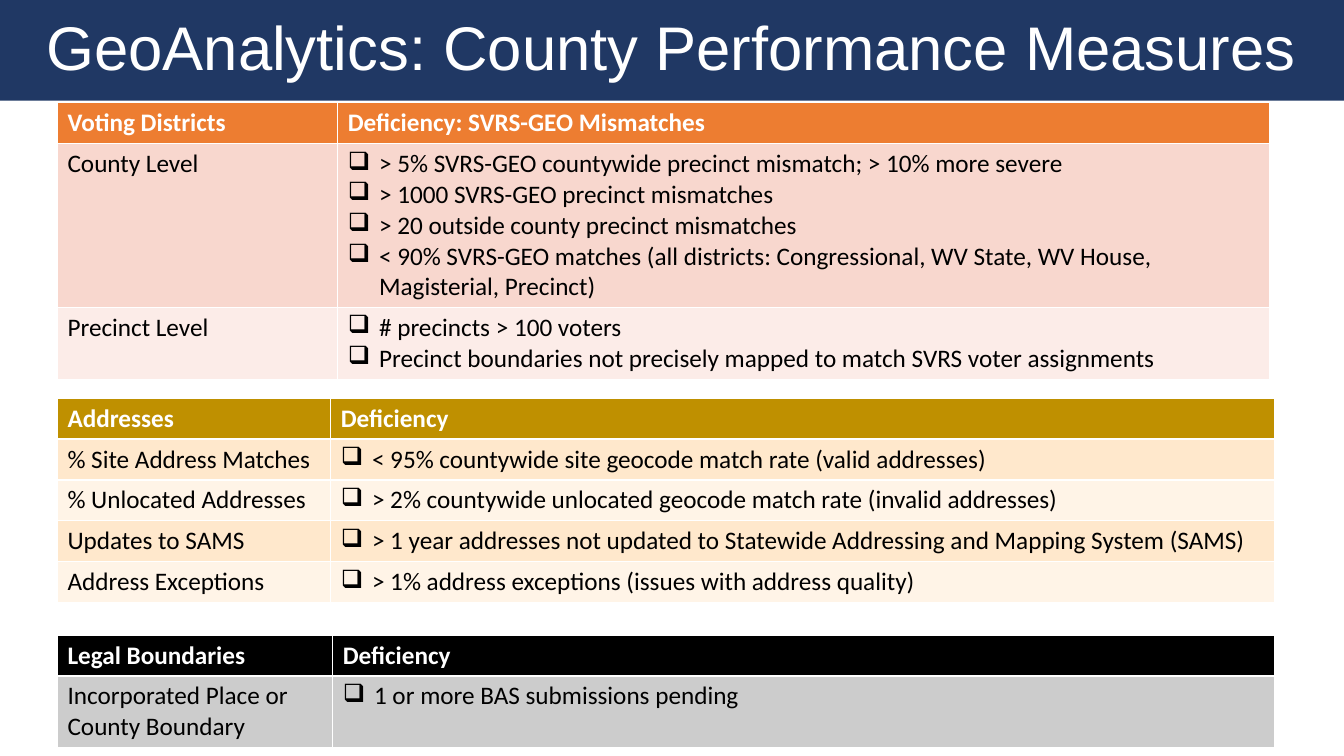
import pptx
import pptx.util
import pptx.dml.color
import pptx.enum.shapes
import pptx.enum.text
import lxml.etree

Inches = pptx.util.Inches
LEFT = 0.57      # shared left edge of the tables
LINE = 0.305     # height of one 18 pt line
PAD = 0.1        # top and bottom cell margins together
INDENT = 0.31    # hanging indent of the checklists


def color(hex_text):
    return pptx.dml.color.RGBColor.from_string(hex_text)


def write(p, text, size=18, font="Calibri", fill="000000", bold=False, bullet=None):
    r = p.add_run()
    r.text = text
    r.font.size = pptx.util.Pt(size)
    r.font.name = font
    r.font.bold = bold
    r.font.color.rgb = color(fill)
    if bullet:
        pPr = p._p.get_or_add_pPr()
        pPr.set("marL", str(Inches(INDENT)))
        pPr.set("indent", str(-Inches(INDENT)))
        ns = "{http://schemas.openxmlformats.org/drawingml/2006/main}"
        lxml.etree.SubElement(pPr, ns + "buChar").set("char", bullet)


prs = pptx.Presentation()
prs.slide_width, prs.slide_height = Inches(13.33), Inches(7.5)
s = prs.slides.add_slide(prs.slide_layouts[6])

# Title band
band = s.shapes.add_shape(pptx.enum.shapes.MSO_SHAPE.RECTANGLE,
                          0, 0, prs.slide_width, Inches(1))
band.shadow.inherit = False
band.fill.solid()
band.fill.fore_color.rgb = color("203864")
band.line.fill.background()
tf = band.text_frame
tf.word_wrap = True
tf.vertical_anchor = pptx.enum.text.MSO_ANCHOR.MIDDLE
p = tf.paragraphs[0]
p.alignment = pptx.enum.text.PP_ALIGN.CENTER
p.line_spacing = 0.9
write(p, "GeoAnalytics: County Performance Measures", size=44, font="Arial", fill="FFFFFF")

# Tables: top, column widths, header fill, band fills, headings,
# then rows of (measure, number of lines, deficiencies)
tables = [
    (1.02, (2.78, 9.24), "ED7D31", ("F8D7CE", "FCECE8"),
     ("Voting Districts", "Deficiency: SVRS-GEO Mismatches"), [
        ("County Level", 5, [
            "> 5% SVRS-GEO countywide precinct mismatch; > 10% more severe",
            "> 1000 SVRS-GEO precinct mismatches",
            "> 20 outside county precinct mismatches",
            "< 90% SVRS-GEO matches (all districts: Congressional, WV State, "
            "WV House, Magisterial, Precinct)"]),
        ("Precinct Level", 2, [
            "# precincts > 100 voters",
            "Precinct boundaries not precisely mapped to match SVRS voter assignments"]),
    ]),
    (3.95, (2.71, 9.36), "BF9000", ("FFE8CC", "FFF4E7"),
     ("Addresses", "Deficiency"), [
        ("% Site Address Matches", 1,
         ["< 95% countywide site geocode match rate (valid addresses)"]),
        ("% Unlocated Addresses", 1,
         ["> 2% countywide unlocated geocode match rate (invalid addresses)"]),
        ("Updates to SAMS", 1,
         ["> 1 year addresses not updated to Statewide Addressing and Mapping System (SAMS)"]),
        ("Address Exceptions", 1,
         ["> 1% address exceptions (issues with address quality)"]),
    ]),
    (6.3, (2.73, 9.34), "000000", ("CCCCCC", "E7E7E7"),
     ("Legal Boundaries", "Deficiency"), [
        ("Incorporated Place or County Boundary", 2,
         ["1 or more BAS submissions pending"]),
    ]),
]

# The default table style supplies the white rules between cells
for top, widths, header, bands, headings, measures in tables:
    heights = [PAD + LINE * n for n in [1] + [m[1] for m in measures]]
    table = s.shapes.add_table(len(heights), 2, Inches(LEFT), Inches(top),
                               Inches(sum(widths)), Inches(sum(heights))).table
    for column, width in zip(table.columns, widths):
        column.width = Inches(width)
    for row, height in zip(table.rows, heights):
        row.height = Inches(height)

    # Header row
    for cell, heading in zip(table.rows[0].cells, headings):
        cell.fill.solid()
        cell.fill.fore_color.rgb = color(header)
        write(cell.text_frame.paragraphs[0], heading, fill="FFFFFF", bold=True)

    # Banded rows with checklists
    for i, (measure, lines, deficiencies) in enumerate(measures):
        cells = list(table.rows[i + 1].cells)
        for cell in cells:
            cell.fill.solid()
            cell.fill.fore_color.rgb = color(bands[i % 2])
        write(cells[0].text_frame.paragraphs[0], measure)
        tf = cells[1].text_frame
        for j, deficiency in enumerate(deficiencies):
            p = tf.add_paragraph() if j else tf.paragraphs[0]
            write(p, deficiency, bullet="❑")

prs.save("out.pptx")
